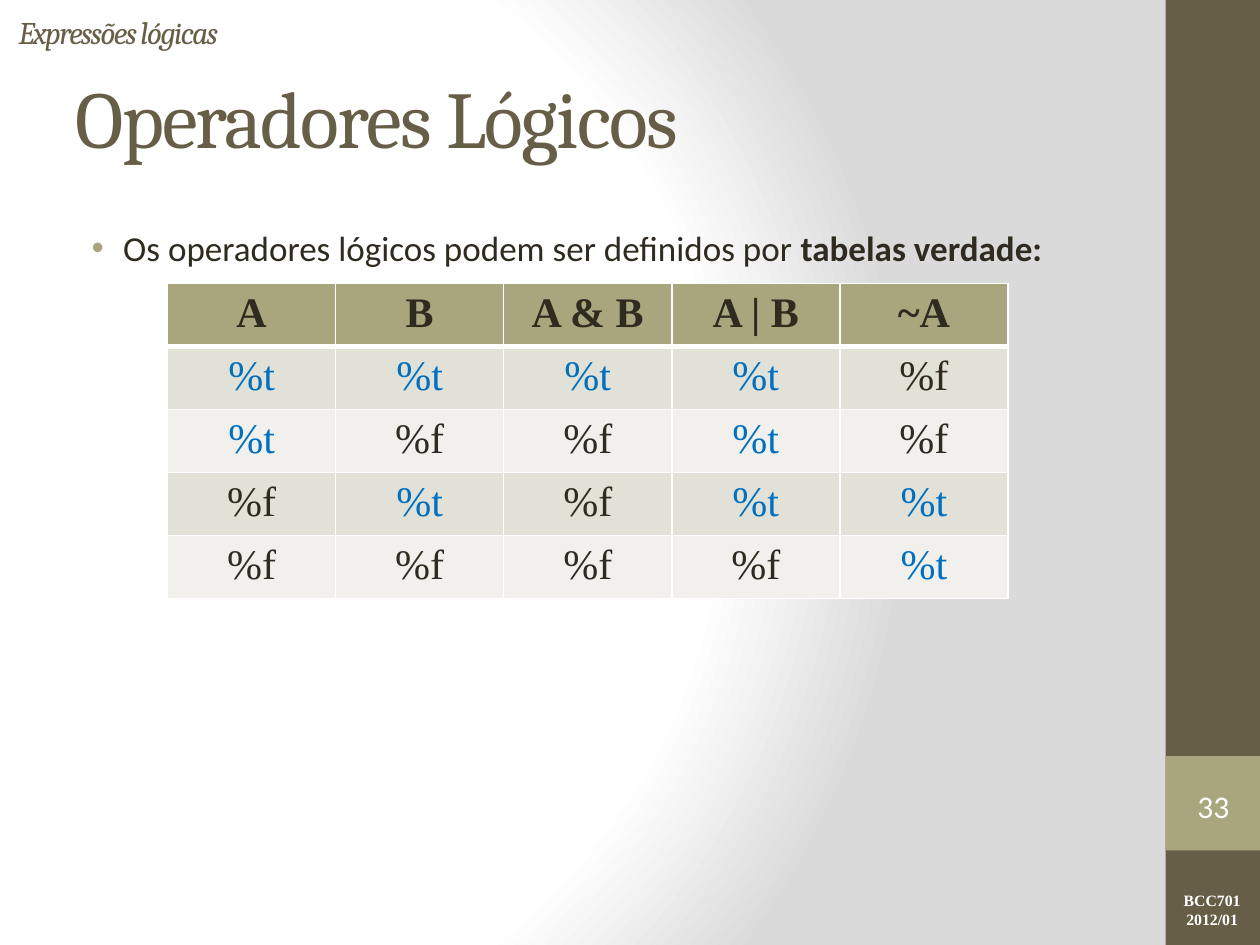
from pptx import Presentation
from pptx.dml.color import RGBColor
from pptx.enum.shapes import MSO_SHAPE as Shape
from pptx.enum.text import MSO_ANCHOR as Anchor, PP_ALIGN as Align
from pptx.oxml import parse_xml
from pptx.oxml.ns import nsdecls
from pptx.util import Inches, Pt

BROWN, TAN, INK, BLUE, WHITE = "675E47", "A9A57C", "2F2B20", "0070C0", "FFFFFF"
BANDS = ["E2E1D7", "F1F0EC"]
HEAD, BODY, SERIF = "Cambria", "Calibri", "Times New Roman"

HEADER = ["A", "B", "A & B", "A | B", "~A"]
TRUTH = ["ttttf", "tfftf", "ftftt", "fffft"]


def rgb(code):
    return RGBColor.from_string(code)


def xml(tag, inner="", attrs=""):
    return parse_xml(f'<a:{tag} {nsdecls("a")} {attrs}>{inner}</a:{tag}>')


class Deck:
    def __init__(self):
        self.prs = Presentation()
        self.prs.slide_width, self.prs.slide_height = Inches(10), Inches(7.5)
        self.slide = self.prs.slides.add_slide(self.prs.slide_layouts[5])
        self.shapes = self.slide.shapes

    def backdrop(self, stops):
        """Fill the background with a circular gradient."""
        marks = "".join(f'<a:gs pos="{pos * 1000}"><a:srgbClr val="{code}"/></a:gs>'
                        for pos, code in stops)
        fill = xml("gradFill", f'<a:gsLst>{marks}</a:gsLst><a:path path="circle">'
                   '<a:fillToRect l="20000" t="50000" r="100000" b="50000"/></a:path>',
                   'rotWithShape="1"')
        self.slide.background.fill.solid()
        solid = self.slide.background._cSld.bg.bgPr[0]
        solid.getparent().replace(solid, fill)

    def run(self, para, text, font, size, color, bold=False, italic=False, track=0):
        run = para.add_run()
        run.text = text
        face = run.font
        face.name, face.size, face.bold, face.italic = font, Pt(size), bold, italic
        face.color.rgb = rgb(color)
        if track:
            run._r.get_or_add_rPr().set("spc", str(track * 100))

    def block(self, kind, box, fill=None):
        shape = self.shapes.add_shape(kind, *map(Inches, box))
        shape.shadow.inherit = False
        shape.line.fill.background()
        if fill:
            shape.fill.solid()
            shape.fill.fore_color.rgb = rgb(fill)
        else:
            shape.fill.background()
        return shape

    def frame(self, box, anchor=Anchor.TOP):
        """Add a wrapping text box and return its text frame."""
        frame = self.shapes.add_textbox(*map(Inches, box)).text_frame
        frame.word_wrap = True
        frame.vertical_anchor = anchor
        return frame

    def title(self, text, box):
        shape = self.shapes.title
        shape.left, shape.top, shape.width, shape.height = map(Inches, box)
        frame = shape.text_frame
        frame.vertical_anchor = Anchor.MIDDLE
        para = frame.paragraphs[0]
        para.alignment = Align.LEFT
        self.run(para, text, HEAD, 46, BROWN, track=-1)

    def bullet(self, para):
        props = para._p.get_or_add_pPr()
        props.set("marL", str(Inches(0.38)))
        props.set("indent", str(Inches(-0.25)))
        props.append(xml("buClr", f'<a:srgbClr val="{TAN}"/>'))
        props.append(xml("buFont", attrs='typeface="Arial"'))
        props.append(xml("buChar", attrs='char="•"'))

    def cell(self, cell, text, fill, color, bold, base):
        cell.fill.solid()
        cell.fill.fore_color.rgb = rgb(fill)
        para = cell.text_frame.paragraphs[0]
        para.alignment = Align.CENTER
        self.run(para, text, SERIF, 24, color, bold)
        props = cell._tc.get_or_add_tcPr()
        edges = {"lnL": 1, "lnR": 1, "lnT": 1, "lnB": base}
        for spot, (edge, width) in enumerate(edges.items()):
            line = f'<a:solidFill><a:srgbClr val="{WHITE}"/></a:solidFill>'
            props.insert(spot, xml(edge, line, f'w="{Pt(width)}"'))

    def table(self, head, rows, box):
        grid = self.shapes.add_table(len(rows) + 1, len(head), *map(Inches, box)).table
        for col, text in enumerate(head):
            self.cell(grid.cell(0, col), text, TAN, INK, True, 3)
        for row, marks in enumerate(rows, 1):
            for col, mark in enumerate(marks):
                color = BLUE if mark == "t" else INK
                self.cell(grid.cell(row, col), f"%{mark}", BANDS[(row - 1) % 2],
                          color, False, 1)


def main():
    deck = Deck()
    deck.backdrop([(0, WHITE), (75, WHITE), (100, "DADADA")])
    deck.block(Shape.RECTANGLE, (9.25, 0, 0.75, 7.5), BROWN)
    deck.block(Shape.RECTANGLE, (9.25, 6, 0.75, 0.75), TAN)

    course = deck.frame((9.26, 7.02, 0.72, 0.4))
    for para, text in [(course.paragraphs[0], "BCC701"),
                       (course.add_paragraph(), "2012/01")]:
        para.alignment = Align.CENTER
        deck.run(para, text, SERIF, 9, WHITE, bold=True)

    deck.title("Operadores Lógicos", (0.5, 0.3, 8.33, 1.25))

    intro = deck.frame((0.5, 1.75, 8.33, 5.25)).paragraphs[0]
    deck.bullet(intro)
    deck.run(intro, "Os operadores lógicos podem ser definidos por ", BODY, 20, INK)
    deck.run(intro, "tabelas verdade:", BODY, 20, INK, bold=True)

    number = deck.block(Shape.DOUBLE_BRACKET, (9.33, 6.18, 0.6, 0.43)).text_frame
    number.margin_left = number.margin_right = 0
    number.margin_top = number.margin_bottom = 0
    number.vertical_anchor = Anchor.MIDDLE
    number.paragraphs[0].alignment = Align.CENTER
    deck.run(number.paragraphs[0], "33", BODY, 18, WHITE)

    topic = deck.frame((0.05, 0.08, 8.32, 0.34), Anchor.MIDDLE)
    deck.run(topic.paragraphs[0], "Expressões lógicas", HEAD, 18, BROWN,
             italic=True, track=-1)

    deck.table(HEADER, TRUTH, (1.33, 2.25, 6.67, 2.03))
    deck.prs.save("out.pptx")


if __name__ == "__main__":
    main()
